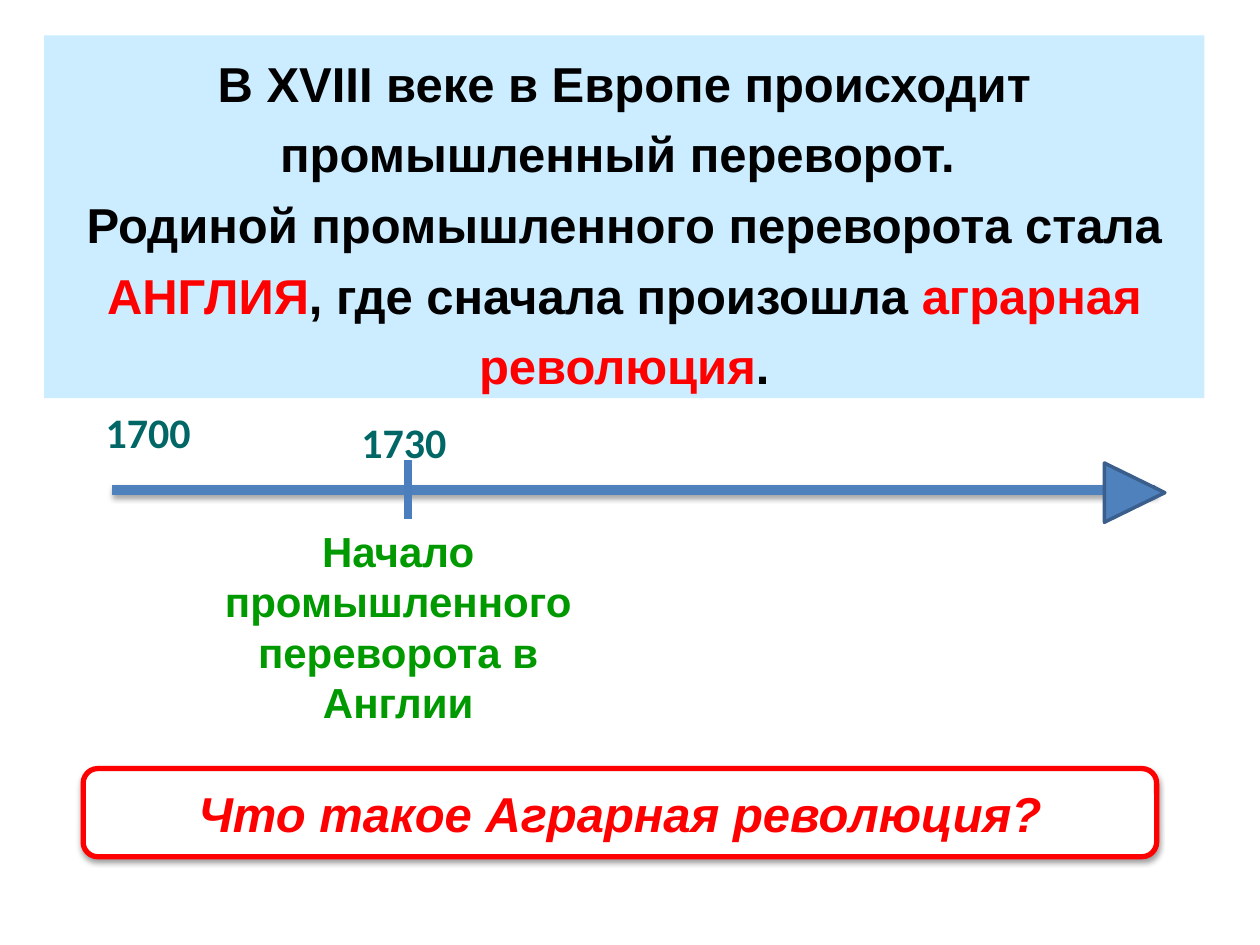
import pptx
import pptx.util
import pptx.dml.color
import pptx.enum.shapes
import pptx.enum.text
import pptx.oxml
import pptx.oxml.ns

Inches, Pt = pptx.util.Inches, pptx.util.Pt
SHAPE = pptx.enum.shapes.MSO_SHAPE
ALIGN = pptx.enum.text.PP_ALIGN
ANCHOR = pptx.enum.text.MSO_ANCHOR
AUTO = pptx.enum.text.MSO_AUTO_SIZE

COLORS = {
    "black": "000000", "white": "FFFFFF", "red": "FF0000", "green": "009900",
    "teal": "006666", "sky": "CCECFF", "axis": "4F81BD", "tick": "4B7EBC",
    "arrow_edge": "3A5F8C",
}


def rgb(name):
    return pptx.dml.color.RGBColor.from_string(COLORS[name])


def add_text(p, text, size=24, color="black", font="Arial", italic=False):
    """Append one bold run to a paragraph."""
    r = p.add_run()
    r.text = text
    r.font.size, r.font.name = Pt(size), font
    r.font.bold, r.font.italic = True, italic
    r.font.color.rgb = rgb(color)


def set_shadow(sp, alpha=None, blur=3.1, dist=1.7):
    """Replace the theme shadow: none, or a soft one straight below."""
    effects = pptx.oxml.parse_xml(f"<a:effectLst {pptx.oxml.ns.nsdecls('a')}/>")
    if alpha:
        effects.append(pptx.oxml.parse_xml(
            f"<a:outerShdw {pptx.oxml.ns.nsdecls('a')} blurRad='{Pt(blur)}' "
            f"dist='{Pt(dist)}' dir='5400000' rotWithShape='0'>"
            f"<a:srgbClr val='{COLORS['black']}'><a:alpha val='{alpha * 1000}'/>"
            "</a:srgbClr></a:outerShdw>"))
    sp._element.spPr.append(effects)


class SlideBuilder:
    def __init__(self, s):
        self.s = s

    def shape(self, kind, box, fill, line=None, width=0, shadow=None):
        sp = self.s.shapes.add_shape(kind, *map(Inches, box))
        sp.fill.solid()
        sp.fill.fore_color.rgb = rgb(fill)
        if line:
            sp.line.color.rgb, sp.line.width = rgb(line), Pt(width)
        else:
            sp.line.fill.background()
        set_shadow(sp, shadow)
        return sp

    def line(self, start, end, color, width, shadow=None):
        sp = self.s.shapes.add_connector(
            pptx.enum.shapes.MSO_CONNECTOR.STRAIGHT, *map(Inches, start + end))
        sp.line.color.rgb, sp.line.width = rgb(color), Pt(width)
        set_shadow(sp, shadow)

    def label(self, box, text, align=ALIGN.LEFT, **style):
        sp = self.s.shapes.add_textbox(*map(Inches, box))
        self.fill_text(sp, [[(text, style)]], align)

    def fill_text(self, sp, paragraphs, align=ALIGN.CENTER, spacing=None,
                  anchor=ANCHOR.TOP, auto_size=AUTO.SHAPE_TO_FIT_TEXT):
        """Fill a shape with paragraphs, each a list of (text, style) runs."""
        tf = sp.text_frame
        tf.word_wrap, tf.auto_size, tf.vertical_anchor = True, auto_size, anchor
        for i, runs in enumerate(paragraphs):
            p = tf.add_paragraph() if i else tf.paragraphs[0]
            p.alignment = align
            if spacing:
                p.line_spacing = spacing
            for text, style in runs:
                add_text(p, text, **style)


def main():
    prs = pptx.Presentation()
    prs.slide_width, prs.slide_height = Inches(10), Inches(7.5)
    b = SlideBuilder(prs.slides.add_slide(prs.slide_layouts[6]))

    # Statement panel
    plain, accent = {"size": 28}, {"size": 28, "color": "red"}
    panel = b.shape(SHAPE.RECTANGLE, (0.35, 0.28, 9.21, 2.88), "sky")
    b.fill_text(panel, [
        [("В XVIII веке в Европе происходит промышленный переворот. ", plain)],
        [("Родиной промышленного переворота стала ", plain),
         ("АНГЛИЯ", accent),
         (", где сначала произошла ", plain),
         ("аграрная революция", accent),
         (".", plain)],
    ], spacing=1.2)

    # Timeline: axis, years, tick and event
    year = {"color": "teal", "font": "Calibri"}
    b.line((0.89, 3.89), (9.17, 3.89), "axis", 6, shadow=35)
    b.label((0.74, 3.18, 0.94, 0.5), "1700", **year)
    b.line((3.24, 3.65), (3.24, 4.12), "tick", 4.5)
    b.label((2.77, 3.26, 0.94, 0.5), "1730", **year)
    b.label((1.44, 4.12, 3.44, 1.72), "Начало промышленного переворота в Англии",
            ALIGN.CENTER, color="green")
    head = b.shape(SHAPE.ISOSCELES_TRIANGLE, (8.77, 3.67, 0.47, 0.48),
                   "axis", "arrow_edge", 2)
    head.rotation = 90

    # Question
    question = b.shape(SHAPE.ROUNDED_RECTANGLE, (0.66, 6.1, 8.52, 0.7),
                       "white", "red", 3, shadow=38)
    b.fill_text(question,
                [[("Что такое Аграрная революция?", {**accent, "italic": True})]],
                anchor=ANCHOR.MIDDLE, auto_size=AUTO.NONE)

    prs.save("out.pptx")


if __name__ == "__main__":
    main()
